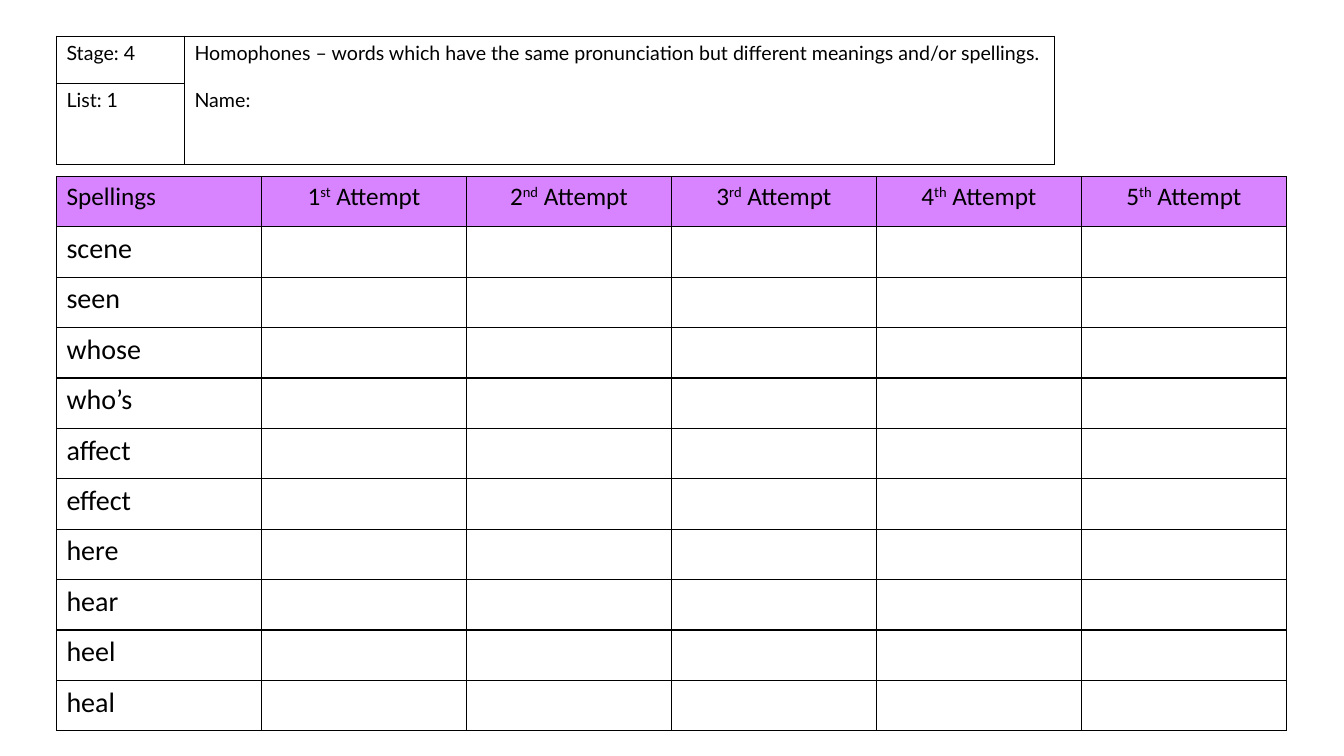
from lxml import etree
from pptx import Presentation, util as u
from pptx.dml.color import RGBColor
from pptx.enum import text
from pptx.oxml import ns

BLACK = RGBColor(0x00, 0x00, 0x00)
PURPLE = RGBColor(0xD8, 0x83, 0xFF)
WORDS = ["scene", "seen", "whose", "who’s", "affect",
         "effect", "here", "hear", "heel", "heal"]
ENDS = ["st", "nd", "rd", "th", "th"]

deck = Presentation()
deck.slide_width, deck.slide_height = u.Inches(13.33), u.Inches(7.5)
slide = deck.slides.add_slide(deck.slide_layouts[6])
left = u.Inches(0.56)


def add_grid(top, cols, rows):
    """Add a plain table with thin black borders; sizes are in inches."""
    grid = slide.shapes.add_table(
        len(rows), len(cols), left, u.Inches(top),
        u.Inches(sum(cols)), u.Inches(sum(rows))).table
    grid.first_row = grid.horz_banding = False
    for col, width in zip(grid.columns, cols):
        col.width = u.Inches(width)
    for row, height in zip(grid.rows, rows):
        row.height = u.Inches(height)
    for cell in grid.iter_cells():
        props = cell._tc.get_or_add_tcPr()
        for side in ("lnL", "lnR", "lnT", "lnB"):
            line = etree.SubElement(props, ns.qn("a:" + side), w=str(u.Pt(1)))
            fill = etree.SubElement(line, ns.qn("a:solidFill"))
            etree.SubElement(fill, ns.qn("a:srgbClr"), val=str(BLACK))
        cell.fill.background()
    return grid


def write(para, words, size, face="Calibri"):
    run = para.add_run()
    run.text = words
    for key, val in {"size": u.Pt(size), "name": face}.items():
        setattr(run.font, key, val)
    run.font.color.rgb = BLACK
    return run


# Spelling practice grid
count = len(ENDS) + 1
grid = add_grid(1.75, [12.2 / count] * count, [0.5] * (len(WORDS) + 1))
for col in range(count):
    cell = grid.cell(0, col)
    cell.fill.solid()
    cell.fill.fore_color.rgb = PURPLE
write(grid.cell(0, 0).text_frame.paragraphs[0], "Spellings", 18)
for num, end in enumerate(ENDS, 1):
    para = grid.cell(0, num).text_frame.paragraphs[0]
    para.alignment = text.PP_ALIGN.CENTER
    write(para, str(num), 18)
    write(para, end, 18)._r.get_or_add_rPr().set("baseline", "30000")
    write(para, " Attempt", 18)
for row, word in enumerate(WORDS, 1):
    write(grid.cell(row, 0).text_frame.paragraphs[0], word, 20)

# Heading with stage, list, topic and name
head = add_grid(0.36, [1.27, 8.63], [0.47, 0.8])
topic = head.cell(0, 1)
topic.merge(head.cell(1, 1))
for row, label in enumerate(["Stage: 4", "List: 1"]):
    write(head.cell(row, 0).text_frame.paragraphs[0], label, 14, "Lato")
write(topic.text_frame.paragraphs[0],
      "Homophones – words which have the same pronunciation "
      "but different meanings and/or spellings.", 14, "Lato")
name = topic.text_frame.add_paragraph()
name.space_before = u.Pt(17)
write(name, "Name:", 14, "Lato")

deck.save("out.pptx")
